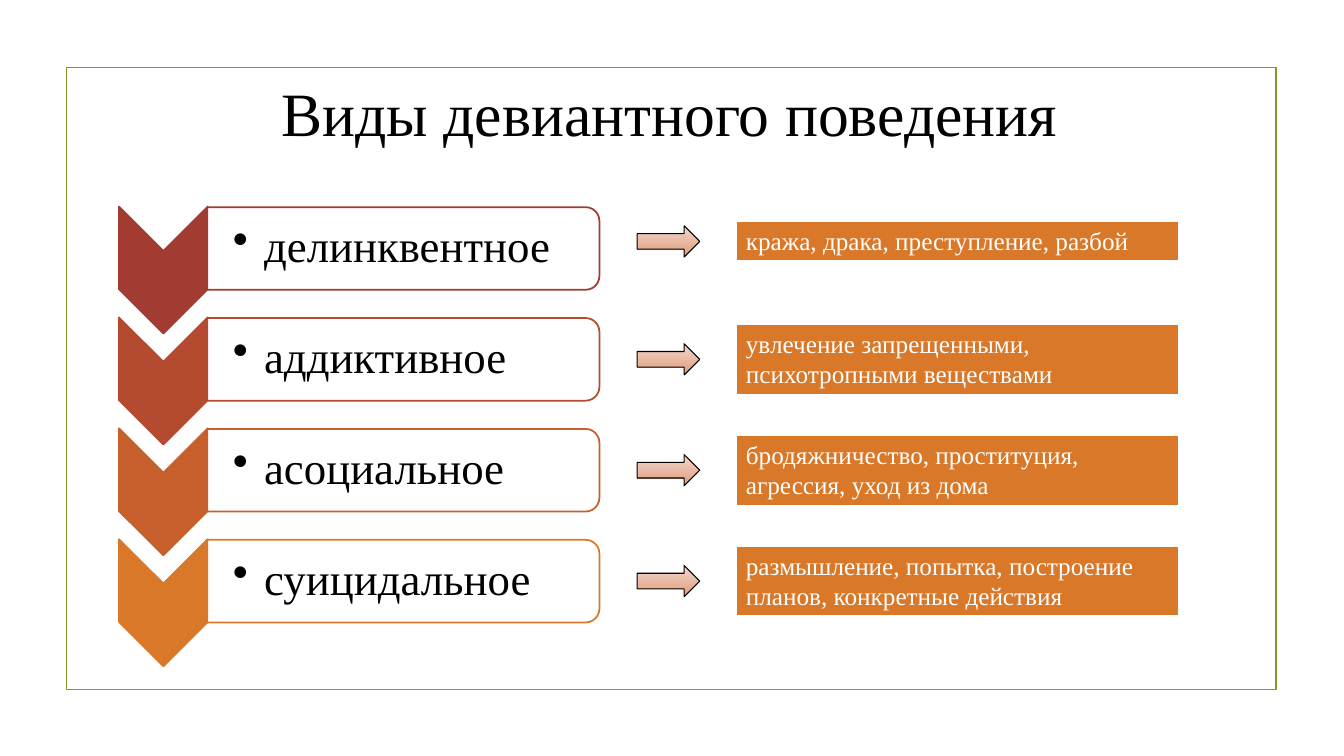
from lxml.etree import SubElement
from pptx import Presentation
from pptx.dml.color import RGBColor
from pptx.enum.shapes import MSO_SHAPE as Shape
from pptx.enum.text import MSO_ANCHOR as Anchor, MSO_AUTO_SIZE as AutoSize, PP_ALIGN as Align
from pptx.oxml.ns import qn
from pptx.util import Emu, Pt

WIDTH, HEIGHT = 1333, 750
FIRST_TOP, ROW_STEP = 205, 110
BLACK, WHITE, GREEN, ORANGE = "000000", "FFFFFF", "83992A", "D97828"

# kind of behaviour, colour, examples, vertical centre and height of the examples box
ROWS = [
    ("делинквентное", "A23C33", "кража, драка, преступление, разбой", 239, 40),
    ("аддиктивное", "B44B30", "увлечение запрещенными, психотропными веществами", 356, 71),
    ("асоциальное", "C75F2C", "бродяжничество, проституция, агрессия, уход из дома", 466, 71),
    ("суицидальное", ORANGE, "размышление, попытка, построение планов, конкретные действия", 576, 71),
]


def px(length):
    """Turn hundredths of an inch into EMU."""
    return Emu(length * 9144)


def color(value):
    return RGBColor.from_string(value)


class SlideBuilder:
    def __init__(self, page, font_name):
        self.page = page
        self.font_name = font_name

    def set_text(self, frame, text, size, text_color, anchor=Anchor.TOP):
        frame.text = text
        frame.word_wrap = True
        frame.auto_size = AutoSize.NONE
        frame.vertical_anchor = anchor
        para = frame.paragraphs[0]
        para.alignment = Align.LEFT
        font = para.runs[0].font
        font.name = self.font_name
        font.size = Pt(size)
        font.color.rgb = color(text_color)
        return para

    def title(self, text, left, top, width, height):
        box = self.page.shapes.title
        box.left, box.top, box.width, box.height = map(px, (left, top, width, height))
        self.set_text(box.text_frame, text, 44, BLACK)

    def shape(self, kind, left, top, width, height, fill=None, line=BLACK, weight=1.25):
        shape = self.page.shapes.add_shape(kind, *map(px, (left, top, width, height)))
        shape.shadow.inherit = False
        if fill:
            shape.fill.solid()
            shape.fill.fore_color.rgb = color(fill)
        else:
            shape.fill.background()
        shape.line.color.rgb = color(line)
        shape.line.width = Pt(weight)
        return shape

    def turned_shape(self, kind, left, top, width, height, fill, line):
        """Add a shape turned by 90 degrees that covers the given area."""
        shift = (width - height) // 2
        shape = self.shape(kind, left + shift, top - shift, height, width, fill, line)
        shape.rotation = 90

    def bullet_text(self, text, left, top, width, height):
        frame = self.page.shapes.add_textbox(*map(px, (left, top, width, height))).text_frame
        frame.margin_left = px(25)
        frame.margin_top = frame.margin_right = frame.margin_bottom = px(2)
        para = self.set_text(frame, text, 32, BLACK, Anchor.MIDDLE)
        para.line_spacing = 0.9
        properties = para._p.get_or_add_pPr()
        properties.set("marL", str(px(31)))
        properties.set("indent", str(-px(31)))
        SubElement(properties, qn("a:buChar")).set("char", "•")

    def examples(self, text, left, center, width, height):
        box = self.shape(Shape.RECTANGLE, left, center - height // 2, width, height, ORANGE, WHITE, 2)
        self.set_text(box.text_frame, text, 18, WHITE)

    def arrow(self, left, center, width, height):
        arrow = self.shape(Shape.RIGHT_ARROW, left, center - height // 2, width, height, weight=0.75)
        arrow.fill.gradient()
        arrow.fill.gradient_angle = 270
        for stop, shade in zip(arrow.fill.gradient_stops, ("F2D7CD", "E09C7C")):
            stop.color.rgb = color(shade)


def main():
    deck = Presentation()
    deck.slide_width, deck.slide_height = px(WIDTH), px(HEIGHT)
    page = deck.slides.add_slide(deck.slide_layouts[5])
    builder = SlideBuilder(page, "Times New Roman")

    builder.shape(Shape.RECTANGLE, 66, 67, 1200, 617, line=GREEN)
    builder.title("Виды девиантного поведения", 269, 69, 797, 84)
    for index, (kind, shade, examples, center, height) in enumerate(ROWS):
        top = FIRST_TOP + index * ROW_STEP
        builder.turned_shape(Shape.CHEVRON, 118, top, 88, 126, shade, shade)
        builder.turned_shape(Shape.ROUND_2_SAME_RECTANGLE, 206, top, 389, 82, WHITE, shade)
        builder.bullet_text(kind, 206, top + 4, 385, 74)
        builder.examples(examples, 730, center, 440, height)
        builder.arrow(632, center, 62, 31)
    deck.save("out.pptx")


if __name__ == "__main__":
    main()
